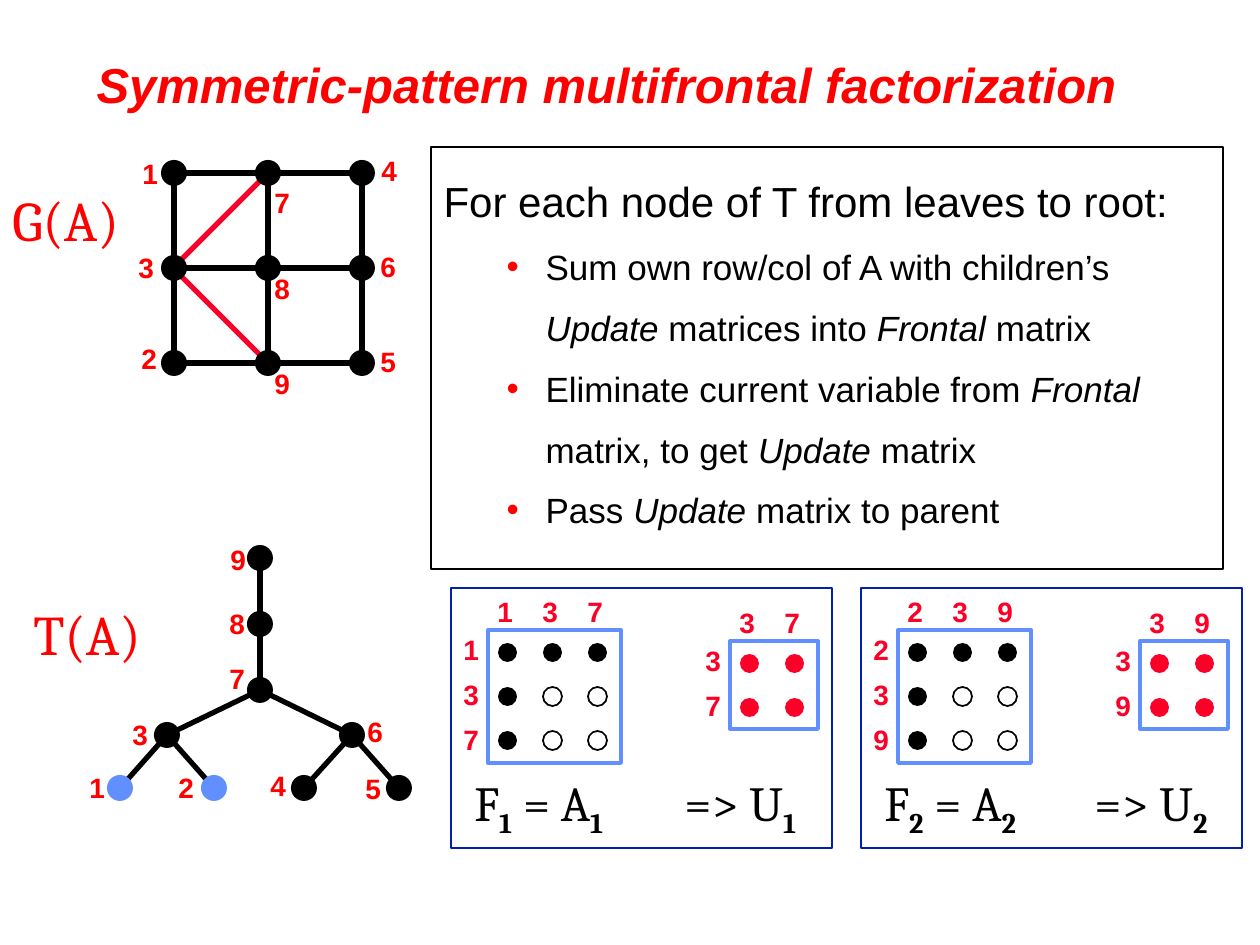
from lxml.etree import SubElement
from pptx import Presentation
from pptx.dml.color import RGBColor
from pptx.enum.shapes import MSO_CONNECTOR, MSO_SHAPE
from pptx.enum.text import MSO_ANCHOR, MSO_AUTO_SIZE, PP_ALIGN
from pptx.oxml.ns import qn
from pptx.util import Emu, Pt

COLORS = {"black": "000000", "red": "FF0000", "crimson": "FC0128",
          "sky": "618FFD", "navy": "021FAE"}
NODE, DOT, STEP = 26, 19, 45


def px(n):
    """Turn pixels at 126 to the inch into EMU."""
    return Emu(round(n * 914400 / 126))


def rgb(name):
    """Look up a named colour."""
    return RGBColor.from_string(COLORS[name])


def write(p, text, size=16, font="Arial", color="red", bold=False,
          italic=False, sub=False):
    """Add runs; parts between asterisks turn italic, or bold subscript."""
    for i, part in enumerate(text.split("*")):
        if not part:
            continue
        marked = i % 2 == 1
        r = p.add_run()
        r.text = part
        r.font.size, r.font.name = Pt(size), font
        r.font.color.rgb = rgb(color)
        r.font.bold = bold or (marked and sub)
        r.font.italic = italic or (marked and not sub)
        if marked and sub:
            r._r.get_or_add_rPr().set("baseline", "-25000")


def label(shapes, text, x, y, w=40, h=47, **fmt):
    """Add an unwrapped text box."""
    tf = shapes.add_textbox(px(x), px(y), px(w), px(h)).text_frame
    tf.word_wrap = False
    tf.auto_size = MSO_AUTO_SIZE.SHAPE_TO_FIT_TEXT
    write(tf.paragraphs[0], text, **fmt)


def box(shapes, kind, x, y, w, h, fill=None, line=None, width=1):
    """Add a preset shape with an optional fill and outline."""
    sp = shapes.add_shape(kind, px(x), px(y), px(w), px(h))
    sp.shadow.inherit = False
    if fill:
        sp.fill.solid()
        sp.fill.fore_color.rgb = rgb(fill)
    else:
        sp.fill.background()
    if line:
        sp.line.color.rgb = rgb(line)
        sp.line.width = Pt(width)
    else:
        sp.line.fill.background()


def edge(shapes, start, end, color="black"):
    """Draw a straight graph edge."""
    c = shapes.add_connector(MSO_CONNECTOR.STRAIGHT, *map(px, start + end))
    c.line.color.rgb = rgb(color)
    c.line.width = Pt(3)
    SubElement(c._element.spPr, qn("a:effectLst"))


def node(shapes, center, color="black"):
    """Draw a graph node around its center."""
    x, y = center
    box(shapes, MSO_SHAPE.OVAL, x - NODE // 2, y - NODE // 2, NODE, NODE, color)


def matrix(shapes, x, y, names, frontal):
    """Draw a dot matrix with row and column names."""
    for i in range(len(names)):
        for j in range(len(names)):
            fill = "black" if frontal else "crimson"
            hollow = frontal and i and j
            box(shapes, MSO_SHAPE.OVAL, x + 10 + STEP * j, y + 13 + 44 * i, DOT, DOT,
                fill=None if hollow else fill, line="black" if hollow else None)
    side = STEP * len(names) - 2
    box(shapes, MSO_SHAPE.RECTANGLE, x, y, side, side, line="sky", width=2.25)
    for k, name in enumerate(names):
        label(shapes, name, x - 3 + STEP * k, y - 42, color="crimson", bold=True)
        label(shapes, name, x - 37, y - 4 + STEP * k, color="crimson", bold=True)


def panel(s, x, index, names):
    """Draw one frontal matrix and its update matrix in a frame."""
    shapes = s.shapes.add_group_shape().shapes
    matrix(shapes, x + 37, 630, names, True)
    matrix(shapes, x + 279, 641, names[1:], False)
    fmt = dict(size=28, font="Cambria", color="black", sub=True)
    label(shapes, f"F*{index}* = A*{index}*", x + 11, 766, 174, 72, **fmt)
    label(shapes, f"=> U*{index}*", x + 221, 766, 146, 72, **fmt)
    box(shapes, MSO_SHAPE.RECTANGLE, x, 588, 381, 260, line="navy")


def tree(s):
    """Draw the elimination tree T(A)."""
    shapes = s.shapes.add_group_shape().shapes
    nodes = {"9": (260, 558), "8": (260, 624), "7": (260, 690),
             "3": (167, 735), "6": (352, 735), "1": (120, 788),
             "2": (214, 788), "4": (304, 788), "5": (399, 788)}
    labels = {"1": (77, 764), "2": (166, 764), "3": (120, 711),
              "4": (258, 762), "6": (355, 708), "7": (217, 655),
              "8": (217, 600), "9": (218, 536), "5": (353, 765)}
    for a, b in ("97", "73", "76", "31", "32", "64", "65"):
        edge(shapes, nodes[a], nodes[b])
    for name, center in nodes.items():
        node(shapes, center, "sky" if name in "12" else "black")
    for name, at in labels.items():
        label(shapes, name, *at, bold=True)
    label(shapes, "T(A)", 21, 593, 151, 79, size=32, font="Cambria")


def graph(s):
    """Draw the filled grid graph G(A)."""
    shapes = s.shapes.add_group_shape().shapes
    xs = [174 + 94 * i for i in range(3)]
    ys = [173 + 95 * i for i in range(3)]
    labels = {"1": (130, 150), "2": (129, 335), "3": (126, 244),
              "4": (369, 147), "6": (368, 243), "7": (262, 179),
              "8": (262, 265), "9": (262, 360), "5": (368, 338)}
    edge(shapes, (178, 273), (262, 357), "crimson")
    edge(shapes, (179, 262), (262, 179), "crimson")
    for x in xs:
        edge(shapes, (x, ys[0]), (x, ys[-1]))
    for y in ys:
        edge(shapes, (xs[0], y), (xs[-1], y))
    for x in xs:
        for y in ys:
            node(shapes, (x, y))
    for name, at in labels.items():
        label(shapes, name, *at, bold=True)
    label(shapes, "G(A)", 0, 179, 157, 79, size=32, font="Cambria")


def place(sp, x, y, w, h):
    """Move a placeholder and return its text frame."""
    sp.left, sp.top, sp.width, sp.height = map(px, (x, y, w, h))
    tf = sp.text_frame
    tf.word_wrap = True
    tf.auto_size = MSO_AUTO_SIZE.NONE
    return tf


def bullet(p, left, hang, char=None):
    """Set a hanging indent with a red bullet or none."""
    pPr = p._p.get_or_add_pPr()
    pPr.set("marL", str(px(left)))
    pPr.set("indent", str(px(-hang)))
    if char:
        SubElement(SubElement(pPr, qn("a:buClr")), qn("a:srgbClr"), val=COLORS["red"])
        SubElement(pPr, qn("a:buChar"), char=char)
    else:
        SubElement(pPr, qn("a:buNone"))


def title(s):
    """Fill the title placeholder."""
    tf = place(s.shapes.title, 84, 42, 1103, 84)
    tf.vertical_anchor = MSO_ANCHOR.MIDDLE
    p = tf.paragraphs[0]
    p.alignment = PP_ALIGN.LEFT
    write(p, "Symmetric-pattern multifrontal factorization",
          size=28, bold=True, italic=True)


def steps(s):
    """Fill the framed body placeholder with the algorithm."""
    sp = s.placeholders[1]
    tf = place(sp, 431, 147, 792, 422)
    sp.line.color.rgb = rgb("black")
    sp.line.width = Pt(1)
    lines = ["For each node of T from leaves to root:",
             "Sum own row/col of A with children’s *Update* matrices into *Frontal *matrix",
             "Eliminate current variable from *Frontal* matrix, to get *Update* matrix",
             "Pass *Update* matrix to parent"]
    for i, text in enumerate(lines):
        p = tf.add_paragraph() if i else tf.paragraphs[0]
        p.level = 1 if i else 0
        p.line_spacing = 1.45
        p.space_before = p.space_after = Pt(0)
        bullet(p, *((102, 39, "•") if i else (48, 48)))
        write(p, text, size=20 if i else 24, color="black")


def main():
    """Build and save the slide."""
    prs = Presentation()
    prs.slide_width, prs.slide_height = px(1260), px(945)
    s = prs.slides.add_slide(prs.slide_layouts[1])
    title(s)
    panel(s, 861, 2, "239")
    panel(s, 451, 1, "137")
    steps(s)
    tree(s)
    graph(s)
    prs.save("out.pptx")


if __name__ == "__main__":
    main()
